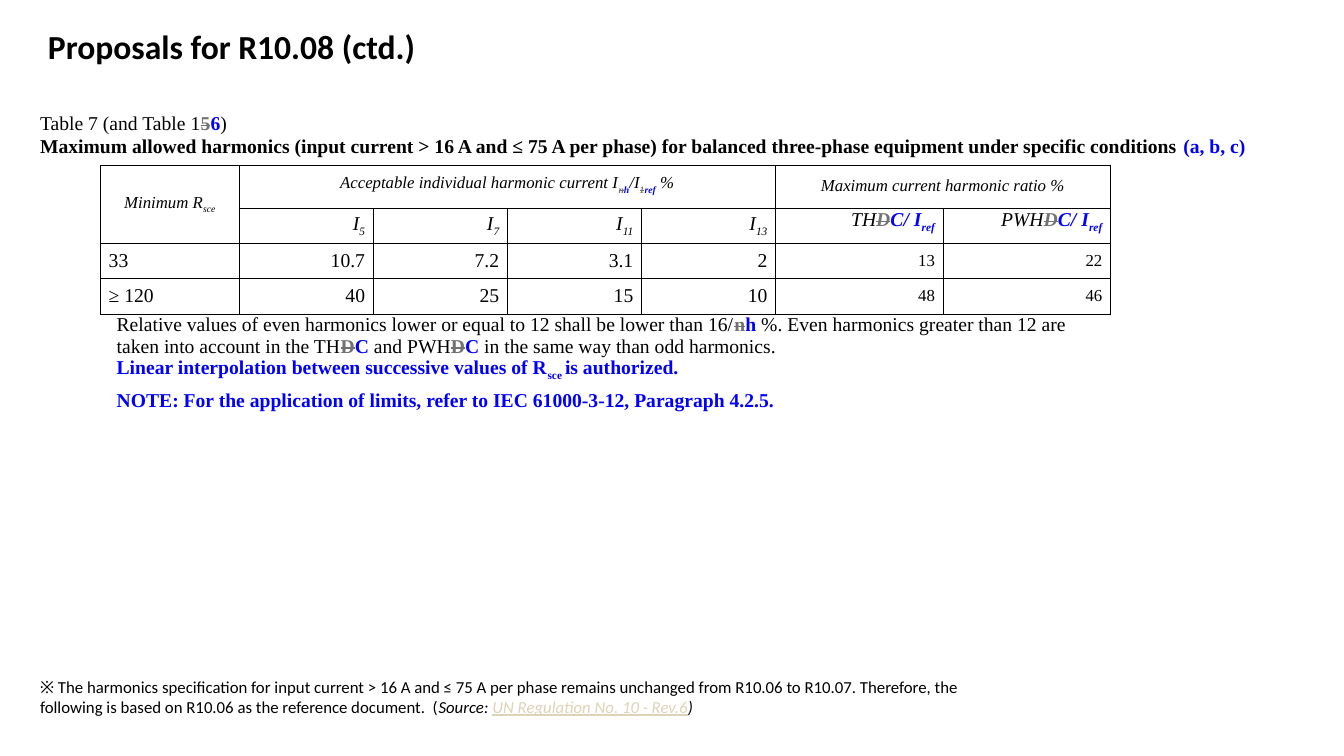
from pptx import Presentation
from pptx import util as u
from pptx.dml.color import RGBColor
from pptx.enum import text
from pptx.oxml.ns import qn
from lxml import etree

BLACK = RGBColor(0x00, 0x00, 0x00)
DELETED_GREY = RGBColor(0x72, 0x72, 0x72)
ADDED_BLUE = RGBColor(0x00, 0x00, 0xFF)
SOURCE_BEIGE = RGBColor(0xDE, 0xD3, 0xB6)
SERIF, SANS = "Times New Roman", "Calibri"
LEFT, CENTER, RIGHT = (text.PP_ALIGN.LEFT, text.PP_ALIGN.CENTER,
                       text.PP_ALIGN.RIGHT)
TOP, MIDDLE = text.MSO_ANCHOR.TOP, text.MSO_ANCHOR.MIDDLE
TIGHT = u.Pt(12)


class ProposalSlide:
    def __init__(self, slide):
        self.slide = slide

    def paragraph(self, para, runs, size, face=SERIF, align=LEFT, bold=False,
                  italic=False, color=BLACK, before=0, after=0, line=None):
        """Fill a paragraph with plain strings and (words, marks) pairs."""
        para.alignment = align
        para.space_before, para.space_after = u.Pt(before), u.Pt(after)
        if line:
            para.line_spacing = line
        font = para.font
        font.name, font.size = face, u.Pt(size)
        font.bold, font.italic = bold, italic
        font.color.rgb = color
        for part in runs:
            words, marks = (part, "") if isinstance(part, str) else part
            run = para.add_run()
            run.text = words
            self.mark(run, marks.split())

    def mark(self, run, marks):
        """Apply any of: old, new, sub, bold, italic, source."""
        font, props = run.font, run._r.get_or_add_rPr()
        if "old" in marks:
            font.bold, font.color.rgb = True, DELETED_GREY
            props.set("strike", "sngStrike")
        if "new" in marks:
            font.bold, font.color.rgb = True, ADDED_BLUE
        if "sub" in marks:
            props.set("baseline", "-25000")
        if "bold" in marks:
            font.bold = True
        if "italic" in marks:
            font.italic = True
        if "source" in marks:
            font.italic = font.underline = True
            font.color.rgb = SOURCE_BEIGE

    def text_box(self, left, top, width, height, lines, size, anchor=TOP,
                 **style):
        box = self.slide.shapes.add_textbox(
            u.Cm(left), u.Cm(top), u.Cm(width), u.Cm(height))
        frame = box.text_frame
        frame.word_wrap, frame.vertical_anchor = True, anchor
        for i, runs in enumerate(lines):
            para = frame.add_paragraph() if i else frame.paragraphs[0]
            self.paragraph(para, runs, size, **style)

    def table(self, left, top, widths, heights):
        frame = self.slide.shapes.add_table(
            len(heights), len(widths), u.Cm(left), u.Cm(top),
            u.Cm(sum(widths)), u.Cm(sum(heights)))
        grid = frame.table
        grid.first_row = grid.horz_banding = False
        for column, width in zip(grid.columns, widths):
            column.width = u.Cm(width)
        for row, height in zip(grid.rows, heights):
            row.height = u.Cm(height)
        for cell in grid.iter_cells():
            cell.fill.background()
            cell.vertical_anchor = MIDDLE
            cell.margin_left = cell.margin_right = u.Cm(0.2)
            cell.margin_top = cell.margin_bottom = 0
        return grid

    def borders(self, cell, drawn="LRTB"):
        props = cell._tc.get_or_add_tcPr()
        for i, side in enumerate("LRTB"):
            edge = etree.Element(qn(f"a:ln{side}"), w=str(u.Pt(0.5)))
            if side in drawn:
                fill = etree.SubElement(edge, qn("a:solidFill"))
                etree.SubElement(fill, qn("a:srgbClr"), val=str(BLACK))
            else:
                etree.SubElement(edge, qn("a:noFill"))
            props.insert(i, edge)

    def cell(self, cell, runs, size, align=RIGHT, **style):
        self.paragraph(cell.text_frame.paragraphs[0], runs, size, align=align,
                       before=2, after=2, **style)


def limits_table(page):
    grid = page.table(2.54, 4.17, [3.48] + [3.38] * 4 + [4.22] * 2,
                      [1.07] + [0.89] * 3 + [3.84])
    for r in range(5):
        for c in range(7):
            page.borders(grid.cell(r, c), "LRTB" if r < 4 else "T")
    for first, last in (((0, 0), (1, 0)), ((0, 1), (0, 4)),
                        ((0, 5), (0, 6)), ((4, 0), (4, 6))):
        grid.cell(*first).merge(grid.cell(*last))

    page.cell(grid.cell(0, 0), ["Minimum R", ("sce", "sub")], 12, CENTER,
              italic=True)
    current = ["Acceptable individual harmonic current I", ("n", "old sub"),
               ("h", "new sub"), "/I", ("1", "old sub"), ("ref", "new sub"),
               " %"]
    for c, heading in ((1, current), (5, ["Maximum current harmonic ratio %"])):
        page.cell(grid.cell(0, c), heading, 12, CENTER, italic=True, line=TIGHT)
    for c, order in enumerate(("5", "7", "11", "13"), 1):
        page.cell(grid.cell(1, c), ["I", (order, "sub")], 14, italic=True)
    for c, ratio in enumerate(("TH", "PWH"), 5):
        page.cell(grid.cell(1, c), [ratio, ("D", "old"), ("C/ I", "new"),
                                    ("ref", "new sub")],
                  14, italic=True, line=TIGHT)

    limits = [("33", "10.7", "7.2", "3.1", "2", "13", "22"),
              ("≥ 120", "40", "25", "15", "10", "48", "46")]
    for r, values in enumerate(limits, 2):
        for c, value in enumerate(values):
            page.cell(grid.cell(r, c), [value], 14 if c < 5 else 12,
                      RIGHT if c else LEFT)

    notes = grid.cell(4, 0)
    notes.vertical_anchor = TOP
    notes.margin_left = u.Cm(0.4)
    frame = notes.text_frame
    page.paragraph(frame.paragraphs[0], [
        "Relative values of even harmonics lower or equal to 12 shall be "
        "lower than 16/", ("n", "old"), ("h ", "new"),
        "%. Even harmonics greater than 12 are taken into account in the TH",
        ("D", "old"), ("C", "new"), " and PWH", ("D", "old"), ("C ", "new"),
        "in the same way than odd harmonics."], 14, before=3)
    for runs in (["Linear interpolation between successive values of R",
                  ("sce ", "sub"), "is authorized."],
                 ["NOTE: For the application of limits, refer to "
                  "IEC 61000-3-12, Paragraph 4.2.5."]):
        page.paragraph(frame.add_paragraph(), runs, 14, bold=True,
                       color=ADDED_BLUE, after=6)


def main():
    deck = Presentation()
    deck.slide_width, deck.slide_height = u.Cm(33.87), u.Cm(19.05)
    page = ProposalSlide(deck.slides.add_slide(deck.slide_layouts[6]))

    page.text_box(0.96, 0.52, 27.05, 1.19, [["Proposals for R10.08 (ctd.)"]],
                  24, face=SANS, bold=True)
    limits_table(page)
    page.text_box(0.76, 2.61, 32.99, 1.55, [
        ["Table 7 (and Table 1", ("5", "old"), ("6", "new"), ")"],
        [("Maximum allowed harmonics (input current > 16 A and ≤ 75 A per "
          "phase) for balanced three-phase equipment under specific "
          "conditions ", "bold"), ("(a, b, c)", "new")]], 14, MIDDLE)
    page.text_box(0.76, 16.92, 23.88, 1.27, [[
        "※ The harmonics specification for input current > 16 A and ≤ 75 A "
        "per phase remains unchanged from R10.06 to R10.07. Therefore, the "
        "following is based on R10.06 as the reference document.  (",
        ("Source: ", "italic"), ("UN Regulation No. 10 - Rev.6", "source"),
        (")", "italic")]], 12, face=SANS)
    deck.save("out.pptx")


if __name__ == "__main__":
    main()
